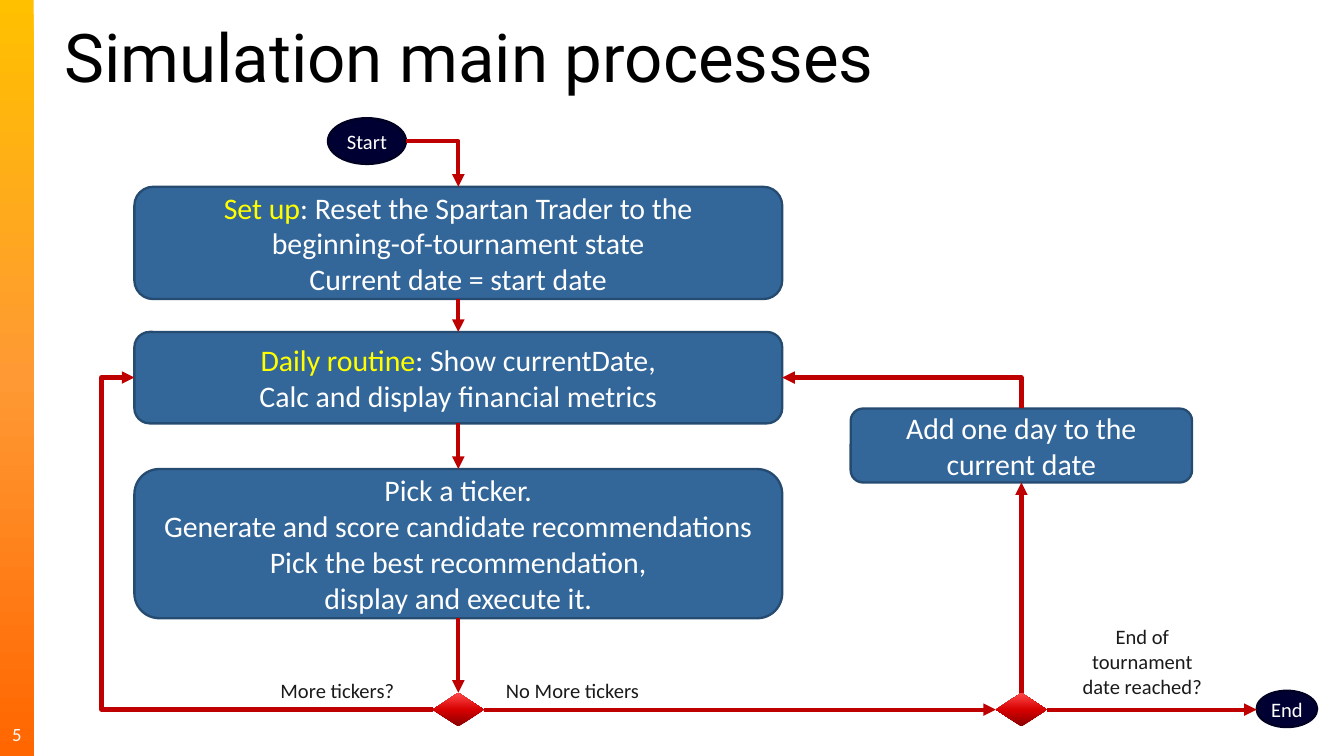
from lxml.etree import SubElement
from pptx import Presentation
from pptx.dml.color import RGBColor
from pptx.enum.shapes import MSO_CONNECTOR, MSO_SHAPE
from pptx.enum.text import MSO_ANCHOR, PP_ALIGN
from pptx.oxml.ns import qn
from pptx.util import Inches, Pt

# The grid has square cells of a tenth of an inch.
CELL = Inches(0.1)
COLS, ROWS = 100, 56.25

WHITE = RGBColor(0xFF, 0xFF, 0xFF)
BLACK = RGBColor(0x00, 0x00, 0x00)
YELLOW = RGBColor(0xFF, 0xFF, 0x00)
INK = RGBColor(0x1A, 0x1A, 0x1A)
BLUE = RGBColor(0x33, 0x66, 0x99)
BLUE_EDGE = RGBColor(0x26, 0x4B, 0x71)
NAVY = RGBColor(0x00, 0x00, 0x32)
NAVY_EDGE = RGBColor(0x00, 0x00, 0x25)
RED = RGBColor(0xBF, 0x00, 0x00)
BAR_STOPS = [(0, RGBColor(0xFF, 0xC0, 0x00)), (50, RGBColor(0xFF, 0x99, 0x33)),
             (100, RGBColor(0xFF, 0x66, 0x00))]
DIAMOND_STOPS = [(0, RGBColor(0x89, 0x00, 0x00)), (48, RGBColor(0xD5, 0x00, 0x00)),
                 (100, RGBColor(0xFF, 0x47, 0x47))]

MAIN_LEFT, MAIN_WIDTH = 10, 48.2
MAIN_X = MAIN_LEFT + MAIN_WIDTH / 2
DAY_X = 76
DAILY_Y = 28.1
DECISION_Y = 52.8
TOP, LEFT, BOTTOM, RIGHT = range(4)


def cells(*values):
    return [round(v * CELL) for v in values]


def write(sp, paragraphs, size, color, font="Calibri", align=PP_ALIGN.CENTER, inset=True):
    """Fill a shape with paragraphs, each a list of (text, colour or None) runs."""
    tf = sp.text_frame
    tf.word_wrap = True
    tf.vertical_anchor = MSO_ANCHOR.MIDDLE
    if not inset:
        tf.margin_left = tf.margin_right = tf.margin_top = tf.margin_bottom = 0
    for i, runs in enumerate(paragraphs):
        p = tf.paragraphs[0] if i == 0 else tf.add_paragraph()
        p.alignment = align
        p.font.size, p.font.name, p.font.color.rgb = Pt(size), font, color
        for text, run_color in runs:
            for j, line in enumerate(text.split("\n")):
                if j:
                    p.add_line_break()
                r = p.add_run()
                r.text = line
                if run_color is not None:
                    r.font.color.rgb = run_color


def add_text(s, box, text, size, color, **style):
    sp = s.shapes.add_textbox(*cells(*box))
    write(sp, [[(text, None)]], size, color, **style)


def add_solid(s, kind, box, fill, edge):
    sp = s.shapes.add_shape(kind, *cells(*box))
    sp.shadow.inherit = False
    sp.fill.solid()
    sp.fill.fore_color.rgb = fill
    sp.line.color.rgb = edge
    sp.line.width = Pt(1.25)
    return sp


def add_gradient(s, kind, box, stops, angle):
    """Add a shape with a gradient; the angle is counter-clockwise."""
    sp = s.shapes.add_shape(kind, *cells(*box))
    sp.shadow.inherit = False
    sp.line.fill.background()
    sp.fill.gradient()
    sp.fill.gradient_angle = angle
    stop_list = sp._element.spPr.find(qn("a:gradFill")).find(qn("a:gsLst"))
    for stop in list(stop_list):
        stop_list.remove(stop)
    for percent, color in stops:
        stop = SubElement(stop_list, qn("a:gs"), pos=str(percent * 1000))
        SubElement(stop, qn("a:srgbClr"), val=str(color))
    return sp


def add_process(s, top, height, paragraphs, left=MAIN_LEFT, width=MAIN_WIDTH):
    sp = add_solid(s, MSO_SHAPE.ROUNDED_RECTANGLE, (left, top, width, height), BLUE, BLUE_EDGE)
    write(sp, paragraphs, 16, WHITE)
    return sp


def add_terminal(s, box, text):
    sp = add_solid(s, MSO_SHAPE.OVAL, box, NAVY, NAVY_EDGE)
    write(sp, [[(text, None)]], 11, WHITE, inset=False)


def add_decision(s, center_x):
    width, height = 3.8, 2.5
    box = (center_x - width / 2, DECISION_Y - height / 2, width, height)
    return add_gradient(s, MSO_SHAPE.DIAMOND, box, DIAMOND_STOPS, 90)


def add_arrow(s, start, end, kind=MSO_CONNECTOR.STRAIGHT):
    c = s.shapes.add_connector(kind, *cells(*start, *end))
    c.line.color.rgb = RED
    c.line.width = Pt(2.25)
    SubElement(c.line._get_or_add_ln(), qn("a:tailEnd"), type="triangle")
    SubElement(c._element.spPr, qn("a:effectLst"))
    return c


def join(s, first, first_side, second, second_side):
    c = add_arrow(s, (0, 0), (1, 1))
    c.begin_connect(first, first_side)
    c.end_connect(second, second_side)


def add_loop(s, start, end, bend):
    """Add an elbow whose middle part lies at a share of its width."""
    c = add_arrow(s, start, end, MSO_CONNECTOR.ELBOW)
    guides = c._element.spPr.find(qn("a:prstGeom")).get_or_add_avLst()
    SubElement(guides, qn("a:gd"), name="adj1", fmla=f"val {round(bend * 100000)}")


def add_corner(s, start, end, vertical_first=False):
    """Add an arrow with one right-angled corner; vertical first runs up, then left."""
    if vertical_first:
        mid_x, mid_y = (start[0] + end[0]) / 2, (start[1] + end[1]) / 2
        half_w, half_h = (start[1] - end[1]) / 2, (start[0] - end[0]) / 2
        start, end = (mid_x - half_w, mid_y + half_h), (mid_x + half_w, mid_y - half_h)
    c = add_arrow(s, start, end, MSO_CONNECTOR.ELBOW)
    c._element.spPr.find(qn("a:prstGeom")).set("prst", "bentConnector2")
    if vertical_first:
        c._element.spPr.find(qn("a:xfrm")).set("rot", str(270 * 60000))


def main():
    prs = Presentation()
    prs.slide_width, prs.slide_height = cells(COLS, ROWS)
    s = prs.slides.add_slide(prs.slide_layouts[6])

    add_gradient(s, MSO_SHAPE.RECTANGLE, (0, 0, 2.5, ROWS), BAR_STOPS, 270)
    add_text(s, (3.8, 1.5, 95.8, 5.3), "Simulation main processes", 36, BLACK,
             font="Roboto", align=PP_ALIGN.LEFT)
    add_text(s, (0, 53.1, 2.5, 3), "5", 10, WHITE, inset=False)

    setup = add_process(s, 13.9, 8.35, [
        [("Set up", YELLOW),
         (": Reset the Spartan Trader to the\nbeginning-of-tournament state", None)],
        [("Current date = start date", None)]])
    daily = add_process(s, 24.7, 6.8, [
        [("Daily routine", YELLOW), (": Show currentDate,", None)],
        [("Calc and display financial metrics", None)]])
    ticker = add_process(s, 34.9, 11.1, [
        [("Pick a ticker.\nGenerate and score candidate recommendations", None)],
        [("Pick the best recommendation,\ndisplay and execute it.", None)]])
    next_day = add_process(s, 30.4, 5.5, [[("Add one day to the current date", None)]],
                           left=63.3, width=25.4)
    more = add_decision(s, MAIN_X)
    finished = add_decision(s, DAY_X)
    add_terminal(s, (24.4, 8.8, 5.8, 3.4), "Start")
    add_terminal(s, (93.5, 51.4, 4.5, 2.7), "End")

    for box, text in [((20, 50.4, 10.2, 1.9), "More tickers?"),
                      ((37.5, 50.4, 10.2, 1.9), "No More tickers"),
                      ((79.8, 46.4, 10.4, 5.6), "End of tournament date reached?")]:
        add_text(s, box, text, 11, INK, inset=False)

    for upper, lower in [(setup, daily), (daily, ticker), (ticker, more)]:
        join(s, upper, BOTTOM, lower, TOP)
    join(s, more, RIGHT, finished, LEFT)
    join(s, finished, TOP, next_day, BOTTOM)
    add_arrow(s, (DAY_X + 1.9, DECISION_Y), (93.5, DECISION_Y))
    add_corner(s, (30.2, 10.5), (MAIN_X, 13.9))
    add_corner(s, (DAY_X, 30.4), (MAIN_LEFT + MAIN_WIDTH, DAILY_Y), vertical_first=True)
    add_loop(s, (MAIN_X - 1.9, DECISION_Y), (MAIN_LEFT, DAILY_Y), 1.11)

    prs.save("out.pptx")


if __name__ == "__main__":
    main()
